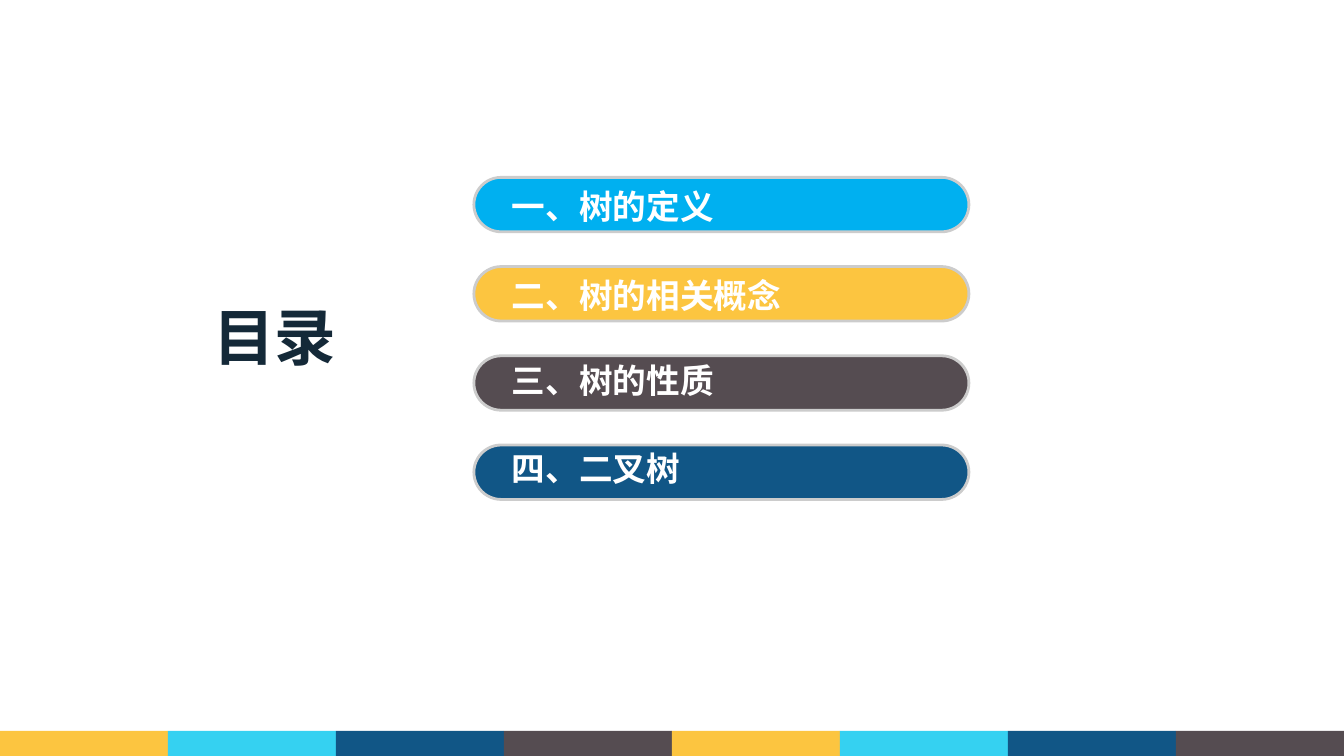
from lxml.etree import SubElement
from pptx import Presentation
from pptx.dml.color import RGBColor
from pptx.enum.shapes import MSO_SHAPE
from pptx.enum.text import MSO_ANCHOR, MSO_AUTO_SIZE, PP_ALIGN
from pptx.oxml.ns import qn
from pptx.util import Inches, Pt

FONT = "Noto Sans CJK SC"
YELLOW, CYAN, NAVY, BROWN = "FCC540", "35D1F1", "115686", "554C51"
TITLE = "目录"
# text, pill colour, top of the text box
CHAPTERS = [
    ("一、树的定义", "00B0F0", 1.8),
    ("二、树的相关概念", YELLOW, 2.68),
    ("三、树的性质", BROWN, 3.52),
    ("四、二叉树", NAVY, 4.39),
]
STRIPE_COLORS = [YELLOW, CYAN, NAVY, BROWN] * 2
SLIDE_WIDTH, SLIDE_HEIGHT = 13.33, 7.5
PILL_TOP, PILL_PITCH = 1.76, 0.885
STRIPE_HEIGHT = 0.25


def color(value):
    return RGBColor.from_string(value)


def add_block(slide, kind, left, top, width, height, fill):
    shape = slide.shapes.add_shape(
        kind, Inches(left), Inches(top), Inches(width), Inches(height))
    shape.shadow.inherit = False
    shape.fill.solid()
    shape.fill.fore_color.rgb = color(fill)
    shape.line.fill.background()
    return shape


def write(shape, text, size, text_color, alignment):
    frame = shape.text_frame
    frame.word_wrap = True
    frame.auto_size = MSO_AUTO_SIZE.NONE
    frame.vertical_anchor = MSO_ANCHOR.TOP
    paragraph = frame.paragraphs[0]
    paragraph.alignment = alignment
    run = paragraph.add_run()
    run.text = text
    run.font.size = Pt(size)
    run.font.bold = True
    run.font.color.rgb = color(text_color)
    run.font.name = FONT
    SubElement(run.font._element, qn("a:ea"), typeface=FONT)


presentation = Presentation()
presentation.slide_width = Inches(SLIDE_WIDTH)
presentation.slide_height = Inches(SLIDE_HEIGHT)
slide = presentation.slides.add_slide(presentation.slide_layouts[5])

title = slide.shapes.title
title.left, title.top = Inches(1.99), Inches(2.92)
title.width, title.height = Inches(1.47), Inches(0.84)
write(title, TITLE, 44, "142938", PP_ALIGN.CENTER)

for index, (text, fill, text_top) in enumerate(CHAPTERS):
    pill = add_block(slide, MSO_SHAPE.ROUNDED_RECTANGLE,
                     4.7, PILL_TOP + index * PILL_PITCH, 4.91, 0.54, fill)
    pill.adjustments[0] = 0.5
    pill.line.color.rgb = color("CCCCCC")
    pill.line.width = Pt(2)
    label = slide.shapes.add_textbox(
        Inches(4.98), Inches(text_top), Inches(4.34), Inches(0.5))
    write(label, text, 24, "FFFFFF", PP_ALIGN.LEFT)

stripe_width = SLIDE_WIDTH / len(STRIPE_COLORS)
for index, fill in enumerate(STRIPE_COLORS):
    add_block(slide, MSO_SHAPE.RECTANGLE, index * stripe_width,
              SLIDE_HEIGHT - STRIPE_HEIGHT, stripe_width, STRIPE_HEIGHT, fill)

presentation.save("out.pptx")
